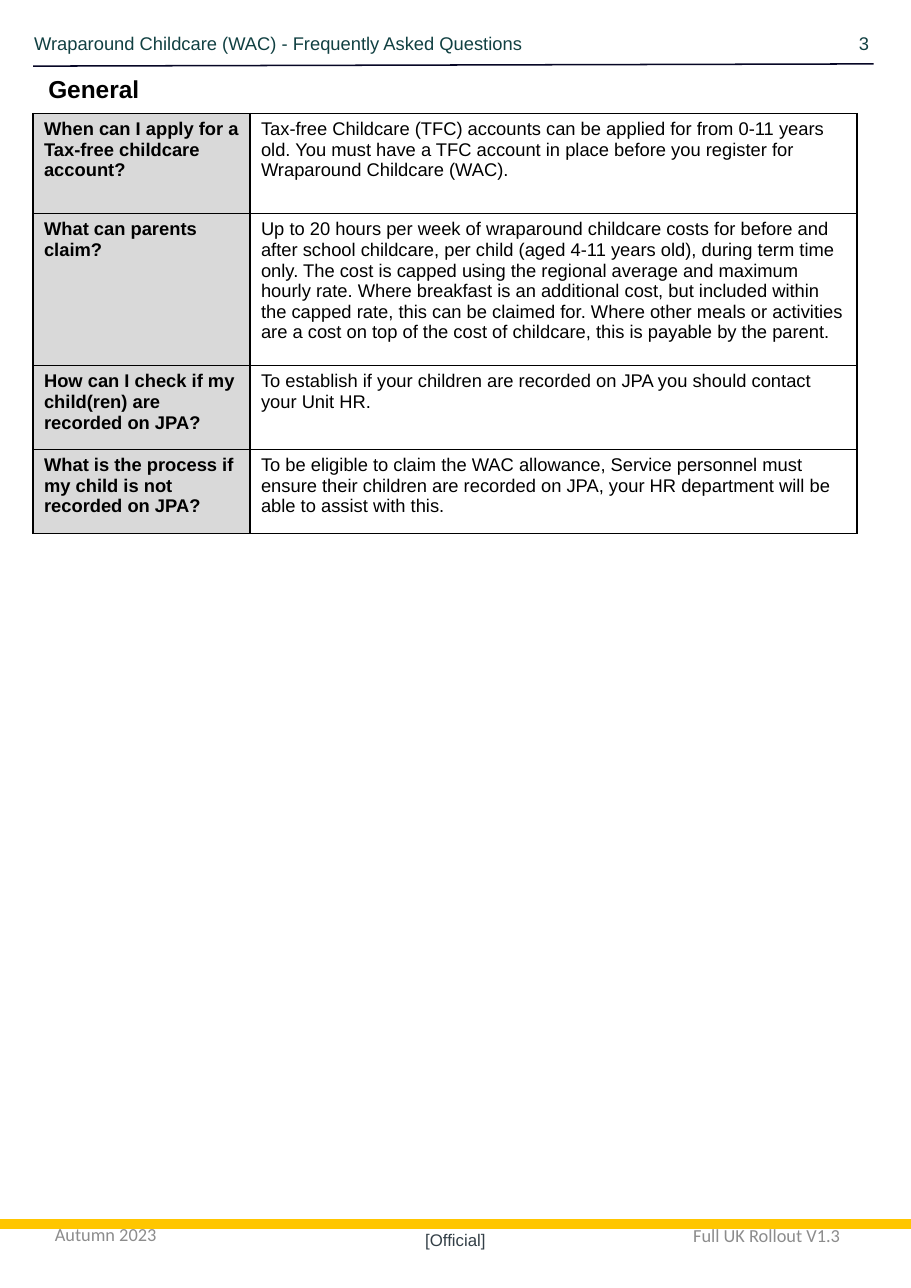
from lxml.etree import SubElement
from pptx import Presentation
from pptx.dml.color import RGBColor
from pptx.enum.shapes import MSO_CONNECTOR
from pptx.enum.text import MSO_ANCHOR as Anchor, PP_ALIGN as Align
from pptx.oxml import parse_xml
from pptx.oxml.ns import nsdecls, qn
from pptx.util import Inches, Pt

PAGE_WIDTH, PAGE_HEIGHT = 8.27, 11.69
BLACK, WHITE, QUESTION_FILL = "000000", "FFFFFF", "D9D9D9"
HEADER_COLOR, FOOTER_COLOR = "114042", "8C8C8C"

QUESTIONS = [
    ("When can I apply for a Tax-free childcare account?",
     "Tax-free Childcare (TFC) accounts can be applied for from 0-11 years old. "
     "You must have a TFC account in place before you register for "
     "Wraparound Childcare (WAC)."),
    ("What can parents claim?",
     "Up to 20 hours per week of wraparound childcare costs for before and after "
     "school childcare, per child (aged 4-11 years old), during term time only. "
     "The cost is capped using the regional average and maximum hourly rate. "
     "Where breakfast is an additional cost, but included within the capped rate, "
     "this can be claimed for. Where other meals or activities are a cost on top "
     "of the cost of childcare, this is payable by the parent."),
    ("How can I check if my child(ren) are recorded on JPA?",
     "To establish if your children are recorded on JPA you should contact "
     "your Unit HR."),
    ("What is the process if my child is not recorded on JPA?",
     "To be eligible to claim the WAC allowance, Service personnel must ensure "
     "their children are recorded on JPA, your HR department will be able to "
     "assist with this."),
]
COLUMN_WIDTHS = [1.97, 5.51]
ROW_HEIGHTS = [0.91, 1.38, 0.76, 0.76]

# text, (left, top, width, height), format
LABELS = [
    ("Wraparound Childcare (WAC) - Frequently Asked Questions",
     (0.31, 0.29, 6, 0.2), dict(color=HEADER_COLOR, margin=0)),
    ("3", (7.39, 0.29, 0.5, 0.2),
     dict(color=HEADER_COLOR, margin=0, align=Align.RIGHT)),
    ("General", (0.34, 0.62, 1.27, 0.37), dict(size=16, bold=True)),
    ("Autumn 2023", (0.4, 10.89, 1.93, 0.62),
     dict(font="Calibri", color=FOOTER_COLOR, anchor=Anchor.MIDDLE)),
    ("Full UK Rollout V1.3", (5.65, 10.9, 2.62, 0.62),
     dict(font="Calibri", color=FOOTER_COLOR, anchor=Anchor.MIDDLE,
          align=Align.CENTER)),
    ("[Official]", (0, 11.15, PAGE_WIDTH, 0.19),
     dict(size=11, color="333F47", margin=0, anchor=Anchor.BOTTOM,
          align=Align.CENTER)),
]

# start, end, color, width in points
RULES = [
    ((PAGE_WIDTH, 11.11), (0, 11.11), "FFC600", 6),
    ((0.3, 0.6), (7.93, 0.58), "060625", 1),
]


def rgb(color):
    return RGBColor.from_string(color)


def write(frame, text, font="Arial", size=12, color=BLACK, bold=False,
          align=Align.LEFT):
    paragraph = frame.paragraphs[0]
    paragraph.alignment = align
    run = paragraph.add_run()
    run.text = text
    run.font.name = font
    run.font.size = Pt(size)
    run.font.bold = bold
    run.font.color.rgb = rgb(color)


def add_label(slide, text, box, margin=None, anchor=Anchor.TOP, **text_format):
    frame = slide.shapes.add_textbox(*map(Inches, box)).text_frame
    frame.word_wrap = True
    frame.vertical_anchor = anchor
    if margin is not None:
        frame.margin_left = frame.margin_right = Inches(margin)
        frame.margin_top = frame.margin_bottom = Inches(margin)
    write(frame, text, **text_format)


def add_rule(slide, start, end, color, width):
    rule = slide.shapes.add_connector(
        MSO_CONNECTOR.STRAIGHT, *map(Inches, start + end))
    rule.line.color.rgb = rgb(color)
    rule.line.width = Pt(width)
    SubElement(rule._element.spPr, qn("a:effectLst"))


def add_borders(cell, color=BLACK, width=1):
    properties = cell._tc.get_or_add_tcPr()
    for position, side in enumerate("LRTB"):
        properties.insert(position, parse_xml(
            f'<a:ln{side} {nsdecls("a")} w="{Pt(width)}"><a:solidFill>'
            f'<a:srgbClr val="{color}"/></a:solidFill></a:ln{side}>'))


def add_questions(slide, left, top):
    table = slide.shapes.add_table(
        len(QUESTIONS), len(COLUMN_WIDTHS), Inches(left), Inches(top),
        Inches(sum(COLUMN_WIDTHS)), Inches(sum(ROW_HEIGHTS))).table
    table.first_row = table.horz_banding = False
    for column, width in zip(table.columns, COLUMN_WIDTHS):
        column.width = Inches(width)
    for row, height, entry in zip(table.rows, ROW_HEIGHTS, QUESTIONS):
        row.height = Inches(height)
        for cell, text, fill, bold in zip(
                row.cells, entry, (QUESTION_FILL, WHITE), (True, False)):
            cell.fill.solid()
            cell.fill.fore_color.rgb = rgb(fill)
            add_borders(cell)
            write(cell.text_frame, text, bold=bold)


def main():
    deck = Presentation()
    deck.slide_width, deck.slide_height = Inches(PAGE_WIDTH), Inches(PAGE_HEIGHT)
    slide = deck.slides.add_slide(deck.slide_layouts[6])
    for rule in RULES:
        add_rule(slide, *rule)
    add_questions(slide, 0.3, 1.03)
    for text, box, text_format in LABELS:
        add_label(slide, text, box, **text_format)
    deck.save("out.pptx")


if __name__ == "__main__":
    main()
